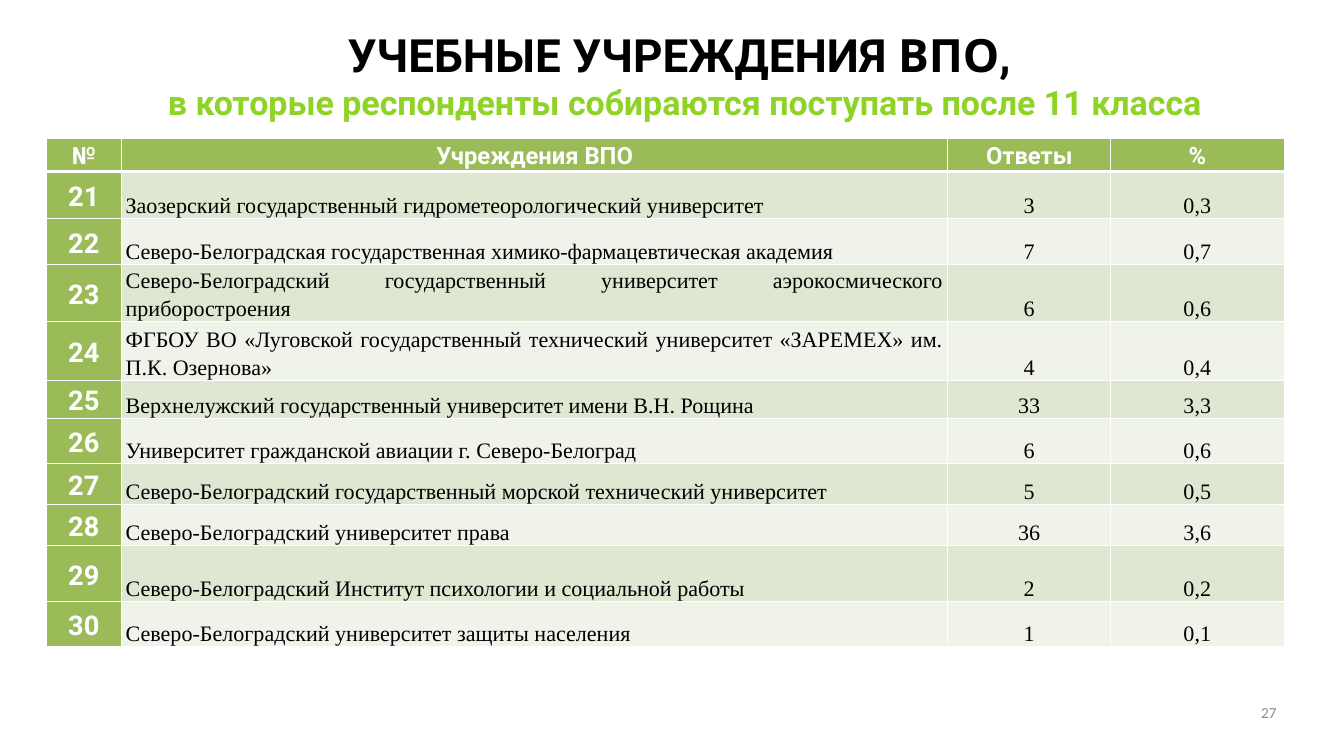
import pptx
import pptx.dml.color
import pptx.enum.text
import pptx.oxml
import pptx.oxml.ns
import pptx.util

Pt = pptx.util.Pt
ALIGN = pptx.enum.text.PP_ALIGN
ANCHOR = pptx.enum.text.MSO_ANCHOR

GREEN = "9BBB59"
BANDS = ("DEE7D1", "EFF3EA")
WHITE = "FFFFFF"
BLACK = "000000"

COLUMN_WIDTHS = (88.5, 973.5, 192, 204)
ROW_HEIGHTS = (38, 55.5, 54, 66.5, 70, 43.5, 54, 48, 48, 66.5, 52.5)
HEADINGS = ("№", "Учреждения ВПО", "Ответы", "%")
FIRST_NUMBER = 21
INSTITUTIONS = (
    ("Заозерский государственный гидрометеорологический университет", "3", "0,3"),
    ("Северо-Белоградская государственная химико-фармацевтическая академия", "7", "0,7"),
    ("Северо-Белоградский государственный университет аэрокосмического приборостроения", "6", "0,6"),
    ("ФГБОУ ВО «Луговской государственный технический университет «ЗАРЕМЕХ» им. П.К. Озернова»", "4", "0,4"),
    ("Верхнелужский государственный университет имени В.Н. Рощина", "33", "3,3"),
    ("Университет гражданской авиации г. Северо-Белоград", "6", "0,6"),
    ("Северо-Белоградский государственный морской технический университет", "5", "0,5"),
    ("Северо-Белоградский университет права", "36", "3,6"),
    ("Северо-Белоградский Институт психологии и социальной работы", "2", "0,2"),
    ("Северо-Белоградский университет защиты населения", "1", "0,1"),
)


def color(value):
    return pptx.dml.color.RGBColor.from_string(value)


def add_text(paragraph, text, size=26, font="Times New Roman", fill=BLACK,
             bold=False, align=ALIGN.CENTER, spacing=None):
    paragraph.alignment = align
    if spacing:
        paragraph.line_spacing = spacing
    run = paragraph.add_run()
    run.text = text
    run.font.size = Pt(size)
    run.font.name = font
    run.font.bold = bold
    run.font.color.rgb = color(fill)


def clear_margins(frame):
    frame.margin_left = frame.margin_right = 0
    frame.margin_top = frame.margin_bottom = 0
    frame.word_wrap = True


def place_title(slide, left, top, width, height):
    title = slide.shapes.title
    title.left, title.top, title.width, title.height = map(Pt, (left, top, width, height))
    clear_margins(title.text_frame)
    title.text_frame.vertical_anchor = ANCHOR.MIDDLE
    paragraph = title.text_frame.paragraphs[0]
    heading = {"size": 54, "bold": True}
    add_text(paragraph, "УЧЕБНЫЕ УЧРЕЖДЕНИЯ ", font="Roboto", **heading)
    add_text(paragraph, "ВПО", font="Cabin", **heading)
    add_text(paragraph, ", ", font="Roboto", **heading)
    paragraph.add_line_break()
    add_text(paragraph, "в которые респонденты собираются поступать после 11 класса",
             size=40, font="Roboto", fill="8FD327", bold=True)


def set_borders(cell, bottom):
    properties = cell._tc.get_or_add_tcPr()
    for side, width in (("L", 1), ("R", 1), ("T", 1), ("B", bottom)):
        properties.append(pptx.oxml.parse_xml(
            f'<a:ln{side} {pptx.oxml.ns.nsdecls("a")} w="{Pt(width)}"><a:solidFill>'
            f'<a:srgbClr val="{WHITE}"/></a:solidFill></a:ln{side}>'))


def fill_cell(cell, text, row, column):
    is_header = row == 0
    is_label = is_header or column == 0
    cell.margin_left = cell.margin_right = Pt(2 if is_header else 5)
    cell.margin_top = cell.margin_bottom = 0
    set_borders(cell, bottom=3 if is_header else 1)
    cell.fill.solid()
    cell.fill.fore_color.rgb = color(GREEN if is_label else BANDS[(row - 1) % 2])
    paragraph = cell.text_frame.paragraphs[0]
    if is_label:
        cell.vertical_anchor = ANCHOR.TOP if is_header else ANCHOR.MIDDLE
        add_text(paragraph, text, size=28 if is_header else 32, font="Roboto",
                 fill=WHITE, bold=True, spacing=1.15)
    else:
        cell.vertical_anchor = ANCHOR.BOTTOM
        add_text(paragraph, text, spacing=Pt(33),
                 align=ALIGN.JUSTIFY if column == 1 else ALIGN.CENTER)


def place_table(slide, left, top):
    records = [HEADINGS]
    for number, institution in enumerate(INSTITUTIONS, FIRST_NUMBER):
        records.append((str(number), *institution))
    table = slide.shapes.add_table(
        len(records), len(HEADINGS), Pt(left), Pt(top),
        Pt(sum(COLUMN_WIDTHS)), Pt(sum(ROW_HEIGHTS))).table
    for column, width in zip(table.columns, COLUMN_WIDTHS):
        column.width = Pt(width)
    for row, height in zip(table.rows, ROW_HEIGHTS):
        row.height = Pt(height)
    for row, record in enumerate(records):
        for column, text in enumerate(record):
            fill_cell(table.cell(row, column), text, row, column)


def place_page_number(slide, left, top, width, height):
    shape = slide.shapes.add_textbox(*map(Pt, (left, top, width, height)))
    clear_margins(shape.text_frame)
    add_text(shape.text_frame.paragraphs[0], "27", size=18, font="Calibri",
             fill="8C8C8C", align=ALIGN.RIGHT)


def main():
    presentation = pptx.Presentation()
    presentation.slide_width = Pt(1583.28)
    presentation.slide_height = Pt(890.64)
    slide = presentation.slides.add_slide(presentation.slide_layouts[5])
    place_page_number(slide, 1140, 828, 364, 45)
    place_table(slide, 54.5, 163.5)
    place_title(slide, 101.5, 31, 1410.5, 114)
    presentation.save("out.pptx")


if __name__ == "__main__":
    main()
